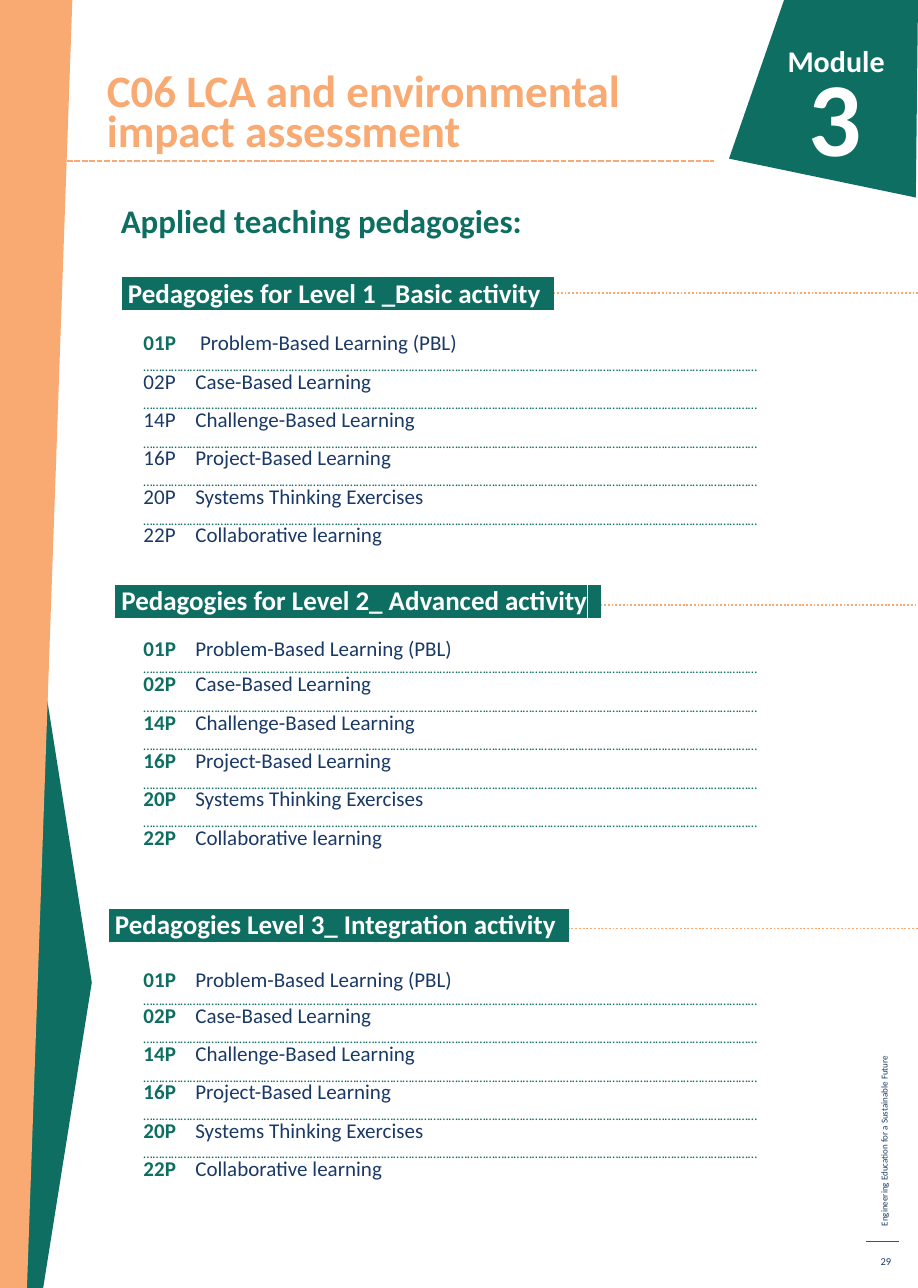
from dataclasses import dataclass

from lxml.etree import SubElement
from pptx import Presentation
from pptx.dml.color import RGBColor
from pptx.enum.dml import MSO_LINE
from pptx.enum.shapes import MSO_CONNECTOR
from pptx.enum.text import MSO_ANCHOR, PP_ALIGN
from pptx.oxml.ns import qn
from pptx.util import Inches, Pt


@dataclass(frozen=True)
class Theme:
    font: str = "Calibri"
    green: str = "0E6E61"
    orange: str = "F9AA73"
    navy: str = "1A3966"
    white: str = "FFFFFF"
    title: float = 30
    subtitle: float = 22
    level: float = 18
    item: float = 14
    leader: float = 9
    module: float = 20
    number: float = 70
    credit: float = 6
    page: float = 7


THEME = Theme()
ROW_PITCH = Pt(12.8)
LEADER = "……………………………………………………………………………………………………………………….………………………………………………………"
LEADER_WIDTH = 413  # points
ELLIPSIS_WIDTH = 0.69 * THEME.leader
LEADER_SPACING = round(100 * (LEADER_WIDTH / len(LEADER) - ELLIPSIS_WIDTH))

PEDAGOGIES = [
    ("01P", "Problem-Based Learning (PBL)"),
    ("02P", "Case-Based Learning"),
    ("14P", "Challenge-Based Learning"),
    ("16P", "Project-Based Learning"),
    ("20P", "Systems Thinking Exercises"),
    ("22P", "Collaborative learning"),
]

# heading, heading left and top, rule left and height, list top, basic level
LEVELS = [
    (" Pedagogies for Level 1 _Basic activity", 1.02, 2.63, 2.56, 2.71, 3.06, True),
    (" Pedagogies for Level 2_ Advanced activity", 0.96, 5.48, 2.51, 5.6, 5.89, False),
    (" Pedagogies Level 3_ Integration activity", 0.9, 8.48, 2.52, 8.6, 8.96, False),
]


def add_box(slide, left, top, width, height, anchor=MSO_ANCHOR.TOP):
    box = slide.shapes.add_textbox(*map(Inches, (left, top, width, height)))
    box.text_frame.word_wrap = True
    box.text_frame.vertical_anchor = anchor
    return box


def add_run(paragraph, text, size, color, bold=False):
    run = paragraph.add_run()
    run.text = text
    run.font.name = THEME.font
    run.font.size = Pt(size)
    run.font.bold = bold
    run.font.color.rgb = RGBColor.from_string(color)
    return run


def add_label(slide, place, text, size, color, bold=False,
              align=PP_ALIGN.LEFT, anchor=MSO_ANCHOR.TOP):
    box = add_box(slide, *place, anchor)
    paragraph = box.text_frame.paragraphs[0]
    paragraph.alignment = align
    add_run(paragraph, text, size, color, bold)
    return box


def add_rule(slide, left, right, y, color, weight, dash=None):
    rule = slide.shapes.add_connector(
        MSO_CONNECTOR.STRAIGHT, *map(Inches, (left, y, right, y)))
    rule.line.color.rgb = RGBColor.from_string(color)
    rule.line.width = Pt(weight)
    if dash:
        rule.line.dash_style = dash
    SubElement(rule._element.spPr, qn("a:effectLst"))


def add_polygon(slide, points, color):
    corners = [(Inches(x), Inches(y)) for x, y in points]
    builder = slide.shapes.build_freeform(*corners[0], scale=1.0)
    builder.add_line_segments(corners[1:], close=True)
    polygon = builder.convert_to_shape()
    polygon.shadow.inherit = False
    polygon.fill.solid()
    polygon.fill.fore_color.rgb = RGBColor.from_string(color)
    polygon.line.fill.background()


def highlight(run, color):
    mark = SubElement(run.font._element, qn("a:highlight"))
    SubElement(mark, qn("a:srgbClr")).set("val", color)
    run.font._element.find(qn("a:solidFill")).addnext(mark)


def add_level_heading(slide, left, top, text):
    paragraph = add_box(slide, left, top, 6.7, 0.33).text_frame.paragraphs[0]
    paragraph.alignment = PP_ALIGN.JUSTIFY
    paragraph.line_spacing = ROW_PITCH
    paragraph._p.get_or_add_pPr().set("marL", str(Inches(0.01)))
    for part, color in ((text, THEME.white), (". ", THEME.green)):
        highlight(add_run(paragraph, part, THEME.level, color, True), THEME.green)


def format_list_row(paragraph, pitch):
    paragraph.line_spacing = pitch
    properties = paragraph._p.get_or_add_pPr()
    properties.set("marL", str(Inches(0.49)))
    properties.set("indent", str(Inches(-0.48)))
    tabs = SubElement(properties, qn("a:tabLst"))
    for position in (0.48, 1.75):
        tab = SubElement(tabs, qn("a:tab"))
        tab.set("pos", str(Inches(position)))
        tab.set("algn", "l")


def add_pedagogy_list(slide, top, basic):
    frame = add_box(slide, 1.22, top, 6.64, 2.07).text_frame
    for index, (code, name) in enumerate(PEDAGOGIES):
        first = index == 0
        if not first:
            # Dotted leader between two entries
            leader = frame.add_paragraph()
            tight = index == 1 and not basic
            format_list_row(leader, Pt(10.8) if tight else ROW_PITCH)
            dots = add_run(leader, LEADER, THEME.leader, THEME.green)
            dots.font._element.set("spc", str(LEADER_SPACING))
        row = frame.paragraphs[0] if first else frame.add_paragraph()
        format_list_row(row, ROW_PITCH)
        strong = first or not basic
        gap = " \t " if first and basic else " \t"
        add_run(row, code, THEME.item, THEME.green if strong else THEME.navy, strong)
        add_run(row, gap + name, THEME.item, THEME.navy)


def add_page_frame(slide):
    credit = add_label(slide, (5.94, 9.11, 4.49, 0.2),
                       "Engineering Education for a Sustainable Future",
                       THEME.credit, THEME.navy)
    credit.rotation = 270
    add_rule(slide, 8.02, 8.32, 11.5, THEME.green, 0.75)
    add_label(slide, (8.02, 11.54, 0.33, 0.29), "29", THEME.page, THEME.navy,
              align=PP_ALIGN.RIGHT, anchor=MSO_ANCHOR.MIDDLE)
    add_polygon(slide, [(0.4, 11.93), (0.23, 11.93), (0.23, 5.17),
                        (0.83, 8.97), (0.85, 9.1)], THEME.green)
    add_polygon(slide, [(0, 0), (0.67, 0), (0.25, 11.93), (0, 11.93)], THEME.orange)


def add_header(slide):
    add_polygon(slide, [(8.5, 0), (7.26, 0), (6.75, 1.47), (8.48, 1.83)], THEME.green)
    add_label(slide, (6.49, 0.34, 1.8, 1.42), "Module", THEME.module,
              THEME.white, True, PP_ALIGN.RIGHT)
    add_rule(slide, 0.62, 6.61, 1.49, THEME.orange, 1.25, MSO_LINE.SQUARE_DOT)
    add_label(slide, (6.28, 0.43, 1.8, 1.42), "3", THEME.number,
              THEME.white, True, PP_ALIGN.RIGHT)
    title = add_label(slide, (0.89, 0.78, 5.39, 1.05),
                      "C06 LCA and environmental impact assessment",
                      THEME.title, THEME.orange, True, anchor=MSO_ANCHOR.BOTTOM)
    title.text_frame.margin_bottom = Inches(0.38)
    title.text_frame.paragraphs[0].line_spacing = Pt(26.8)


def main():
    deck = Presentation()
    deck.slide_width, deck.slide_height = Inches(8.5), Inches(11.93)
    slide = deck.slides.add_slide(deck.slide_layouts[6])

    # Side bands and footer
    add_page_frame(slide)

    # Section title
    applied = add_label(slide, (1.02, 1.85, 5.54, 1.05), "Applied teaching pedagogies:",
                        THEME.subtitle, THEME.green, True)
    applied.text_frame.paragraphs[0].line_spacing = 0.9

    # Three levels of activity
    for heading, left, top, rule_left, rule_y, list_top, basic in LEVELS:
        add_rule(slide, rule_left, 8.5, rule_y, THEME.orange, 1.25, MSO_LINE.ROUND_DOT)
        add_level_heading(slide, left, top, heading)
        add_pedagogy_list(slide, list_top, basic)

    # Module badge and page title
    add_header(slide)
    deck.save("out.pptx")


if __name__ == "__main__":
    main()
